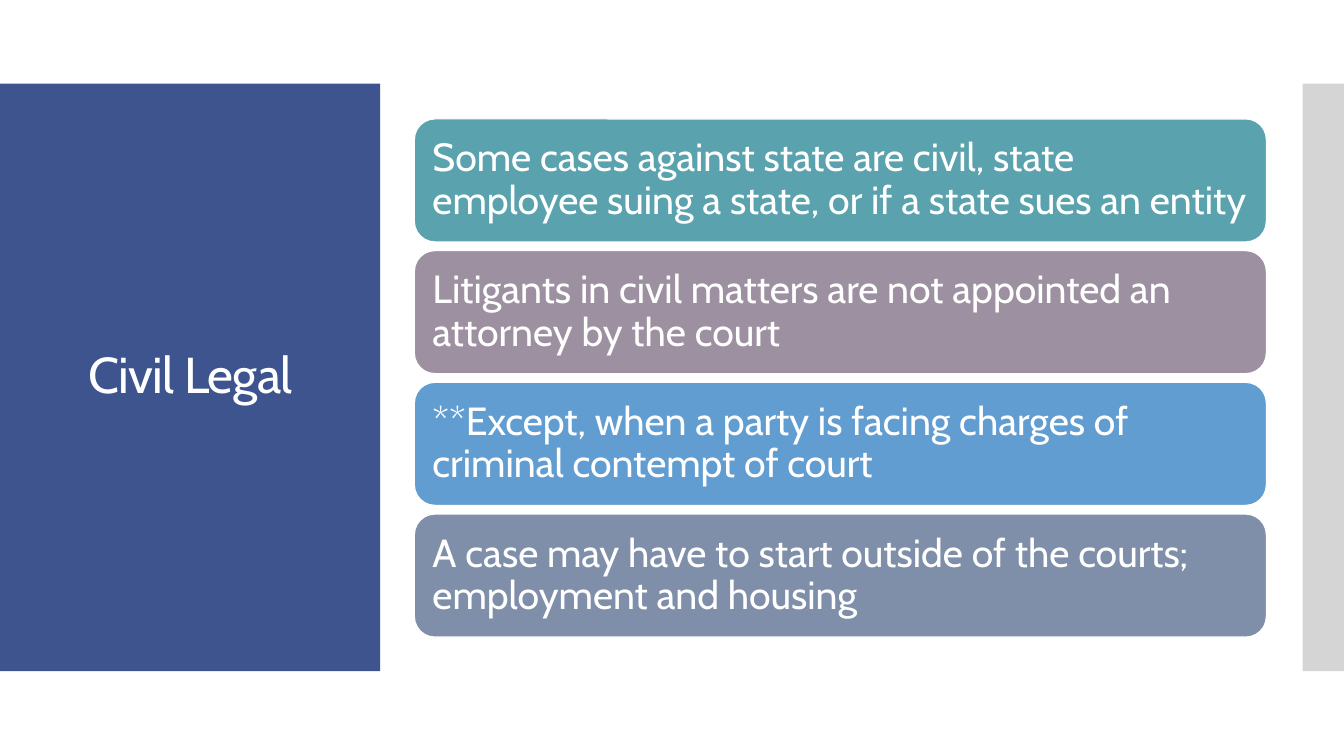
from pptx import Presentation
from pptx.dml.color import RGBColor
from pptx.enum.shapes import MSO_SHAPE
from pptx.enum.text import MSO_ANCHOR, MSO_AUTO_SIZE, PP_ALIGN
from pptx.util import Inches, Pt

HEADING = "Civil Legal"
POINTS = [
    ("Some cases against state are civil, state employee suing a state, or if a state sues an entity", "teal"),
    ("Litigants in civil matters are not appointed an attorney by the court", "mauve"),
    ("**Except, when a party is facing charges of criminal contempt of court", "sky"),
    ("A case may have to start outside of the courts; employment and housing", "slate"),
]
COLORS = {
    "white": "FFFFFF", "navy": "3D548F", "grey": "D5D5D5",
    "teal": "5AA2AE", "mauve": "9D90A0", "sky": "629DD1", "slate": "7F8FA9",
}
FONT = "Cabin"
WIDTH, HEIGHT = 13.33, 7.5
BAND_TOP, BAND_HEIGHT = 0.83, 5.83
PANEL_WIDTH, EDGE_LEFT = 3.77, 12.92
CARD_LEFT, CARD_TOP, CARD_WIDTH, CARD_HEIGHT = 4.11, 1.18, 8.45, 1.22
LAST_CARD_TOP = 5.1
CARD_PITCH = (LAST_CARD_TOP - CARD_TOP) / (len(POINTS) - 1)
CARD_INSET = 0.12


def color(name):
    return RGBColor.from_string(COLORS[name])


def add_block(slide, preset, box, fill):
    block = slide.shapes.add_shape(preset, *(Inches(v) for v in box))
    block.shadow.inherit = False
    block.fill.solid()
    block.fill.fore_color.rgb = color(fill)
    block.line.fill.background()
    return block


def write(frame, text, size, align):
    frame.text = text
    frame.word_wrap = True
    frame.auto_size = MSO_AUTO_SIZE.NONE
    frame.vertical_anchor = MSO_ANCHOR.MIDDLE
    paragraph = frame.paragraphs[0]
    paragraph.alignment = align
    paragraph.line_spacing = 0.9
    font = paragraph.runs[0].font
    font.name = FONT
    font.size = Pt(size)
    font.color.rgb = color("white")


def main():
    deck = Presentation()
    deck.slide_width, deck.slide_height = Inches(WIDTH), Inches(HEIGHT)
    slide = deck.slides.add_slide(deck.slide_layouts[5])

    add_block(slide, MSO_SHAPE.RECTANGLE, (0, BAND_TOP, PANEL_WIDTH, BAND_HEIGHT), "navy")
    add_block(slide, MSO_SHAPE.RECTANGLE,
              (EDGE_LEFT, BAND_TOP, WIDTH - EDGE_LEFT, BAND_HEIGHT), "grey")

    heading = slide.shapes.title
    heading.left, heading.top = Inches(0.28), Inches(1.23)
    heading.width, heading.height = Inches(3.22), Inches(5.03)
    write(heading.text_frame, HEADING, 36, PP_ALIGN.CENTER)
    heading.text_frame.paragraphs[0].runs[0].font._element.set("spc", "-60")
    slide.shapes._spTree.append(heading._element)

    for row, (point, fill) in enumerate(POINTS):
        top = CARD_TOP + row * CARD_PITCH
        card = add_block(slide, MSO_SHAPE.ROUNDED_RECTANGLE,
                         (CARD_LEFT, top, CARD_WIDTH, CARD_HEIGHT), fill)
        card.line.color.rgb = color("white")
        card.line.width = Pt(0.85)
        frame = card.text_frame
        frame.margin_left = frame.margin_right = Inches(CARD_INSET)
        frame.margin_top = frame.margin_bottom = Inches(CARD_INSET)
        write(frame, point, 28, PP_ALIGN.LEFT)

    deck.save("out.pptx")


if __name__ == "__main__":
    main()
